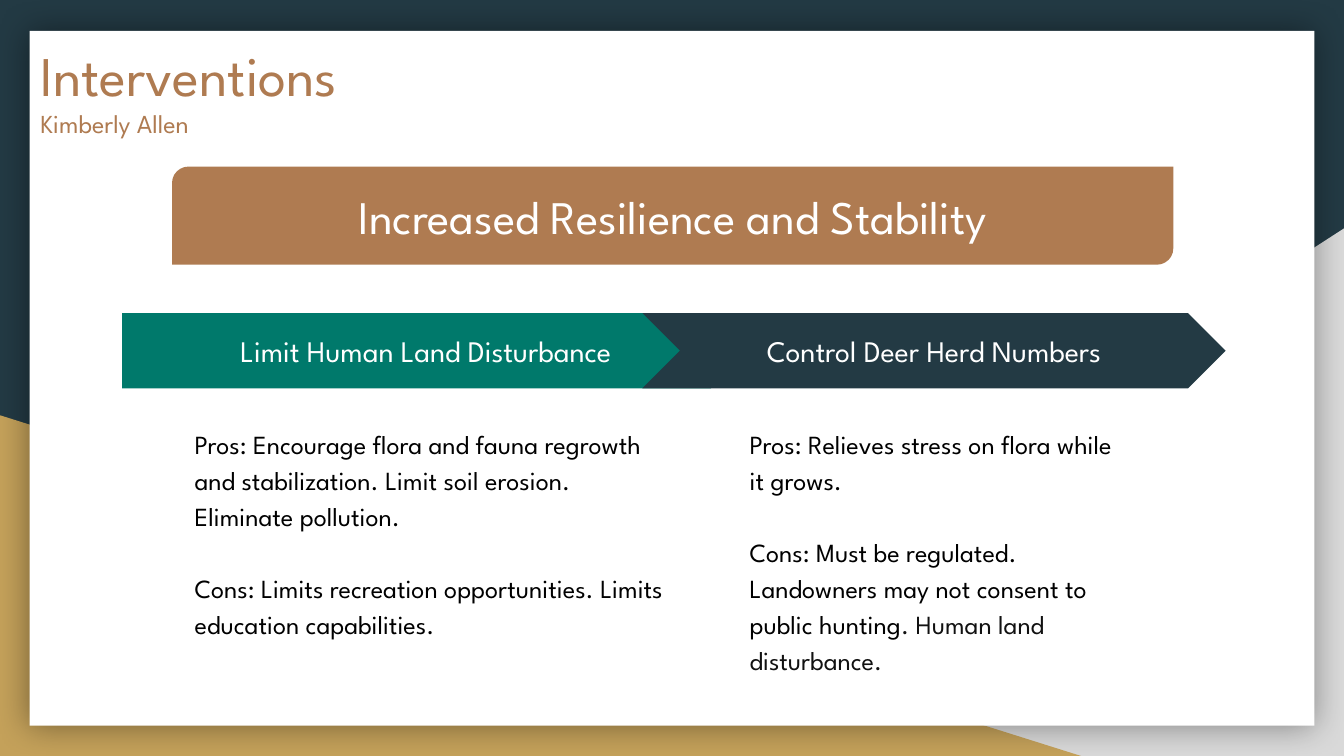
from lxml import etree
from pptx import Presentation
from pptx.dml.color import RGBColor as RGB
from pptx.enum.shapes import MSO_SHAPE as SHAPE
from pptx.enum.text import MSO_ANCHOR as ANCHOR, MSO_AUTO_SIZE as AUTO, PP_ALIGN as ALIGN
from pptx.oxml.ns import qn
from pptx.util import Inches, Pt

THEME = {
    "font": "League Spartan",
    "navy": "233A44", "grey": "D9D9D9", "gold": "C4A15A", "white": "FFFFFF",
    "teal": "00796B", "copper": "AF7B51", "black": "000000", "soft": "111111",
    "title": 30, "author": 13.9, "banner": 25, "step": 16, "body": 14,
    "line": 1.15, "gap": 19.3,
}

TITLE = [("Interventions", "title"), ("Kimberly Allen", "author")]
TITLE_BOX = (0.2, 0.2, 8.21, 1.04)
BANNER = "Increased Resilience and Stability"
BANNER_BOX = (1.28, 1.24, 7.45, 0.73)
STEP_TOP, STEP_H = 2.33, 0.56
BODY_TOP, BODY_H = 3.05, 2.19

STEPS = [
    {"label": "Limit Human Land Disturbance", "kind": SHAPE.PENTAGON, "color": "teal",
     "arrow": (0.91, 4.66), "body": (1.35, 3.72),
     "notes": [
         [("Pros: Encourage flora and fauna regrowth and stabilization. "
           "Limit soil erosion. Eliminate pollution.", "black")],
         [("Cons: Limits recreation opportunities. Limits education capabilities.", "black")]]},
    {"label": "Control Deer Herd Numbers", "kind": SHAPE.CHEVRON, "color": "navy",
     "arrow": (4.78, 4.34), "body": (5.48, 2.94),
     "notes": [
         [("Pros: Relieves stress on flora while it grows.", "black")],
         [("Cons: Must be regulated. Landowners may not consent to public hunting", "black"),
          (". Human land disturbance.", "soft")]]},
]


def color(name):
    return RGB.from_string(THEME[name])


def style(font, size, name):
    font.name = THEME["font"]
    font.size = Pt(THEME[size])
    font.color.rgb = color(name)


def frame(sp, anchor):
    tf = sp.text_frame
    tf.word_wrap = True
    tf.auto_size = AUTO.NONE
    tf.vertical_anchor = anchor
    tf.margin_left = tf.margin_right = tf.margin_top = tf.margin_bottom = Inches(0.1)
    return tf


def add_shape(slide, kind, box, fill, text="", size="step", adj=()):
    sp = slide.shapes.add_shape(kind, *map(Inches, box))
    sp.shadow.inherit = False
    sp.fill.solid()
    sp.fill.fore_color.rgb = color(fill)
    sp.line.fill.background()
    for i, value in enumerate(adj):
        sp.adjustments[i] = value
    if text:
        p = frame(sp, ANCHOR.MIDDLE).paragraphs[0]
        p.text = text
        p.alignment = ALIGN.CENTER
        style(p.runs[0].font, size, "white")
    return sp


def add_backdrop(slide):
    slide.background.fill.solid()
    slide.background.fill.fore_color.rgb = color("navy")
    sp = add_shape(slide, SHAPE.RIGHT_TRIANGLE, (3.92, 1.7, 6.08, 3.93), "grey")
    sp._element.spPr.find(qn("a:xfrm")).set("flipH", "1")
    add_shape(slide, SHAPE.RIGHT_TRIANGLE, (0, 3.09, 8.06, 2.54), "gold")
    panel = add_shape(slide, SHAPE.RECTANGLE, (0.22, 0.23, 9.56, 5.17), "white")
    effects = panel._element.spPr.find(qn("a:effectLst"))
    shadow = etree.SubElement(effects, qn("a:outerShdw"), blurRad=str(Pt(18)),
                              dist="0", dir="0", algn="ctr", rotWithShape="0")
    tint = etree.SubElement(shadow, qn("a:srgbClr"), val=THEME["black"])
    etree.SubElement(tint, qn("a:alpha"), val="40000")


def add_notes(slide, box, notes):
    tf = frame(slide.shapes.add_textbox(*map(Inches, box)), ANCHOR.TOP)
    for i, parts in enumerate(notes):
        p = tf.add_paragraph() if i else tf.paragraphs[0]
        p.line_spacing = THEME["line"]
        if i:
            p.space_before = Pt(THEME["gap"])
        for text, name in parts:
            r = p.add_run()
            r.text = text
            style(r.font, "body", name)


def add_title(slide):
    sp = slide.shapes.title
    sp.left, sp.top, sp.width, sp.height = map(Inches, TITLE_BOX)
    tf = frame(sp, ANCHOR.TOP)
    tf.text = "\n".join(text for text, _ in TITLE)
    for p, (_, size) in zip(tf.paragraphs, TITLE):
        p.alignment = ALIGN.LEFT
        style(p.runs[0].font, size, "copper")
    slide.shapes._spTree.append(sp._element)


def main():
    prs = Presentation()
    prs.slide_width, prs.slide_height = Inches(10), Inches(5.625)
    slide = prs.slides.add_slide(prs.slide_layouts[5])
    add_backdrop(slide)
    for step in STEPS:
        left, width = step["arrow"]
        add_shape(slide, step["kind"], (left, STEP_TOP, width, STEP_H),
                  step["color"], step["label"], adj=(0.5,))
        left, width = step["body"]
        add_notes(slide, (left, BODY_TOP, width, BODY_H), step["notes"])
    add_shape(slide, SHAPE.ROUND_2_DIAG_RECTANGLE, BANNER_BOX, "copper",
              BANNER, "banner", adj=(0.167, 0))
    add_title(slide)
    prs.save("out.pptx")


if __name__ == "__main__":
    main()
